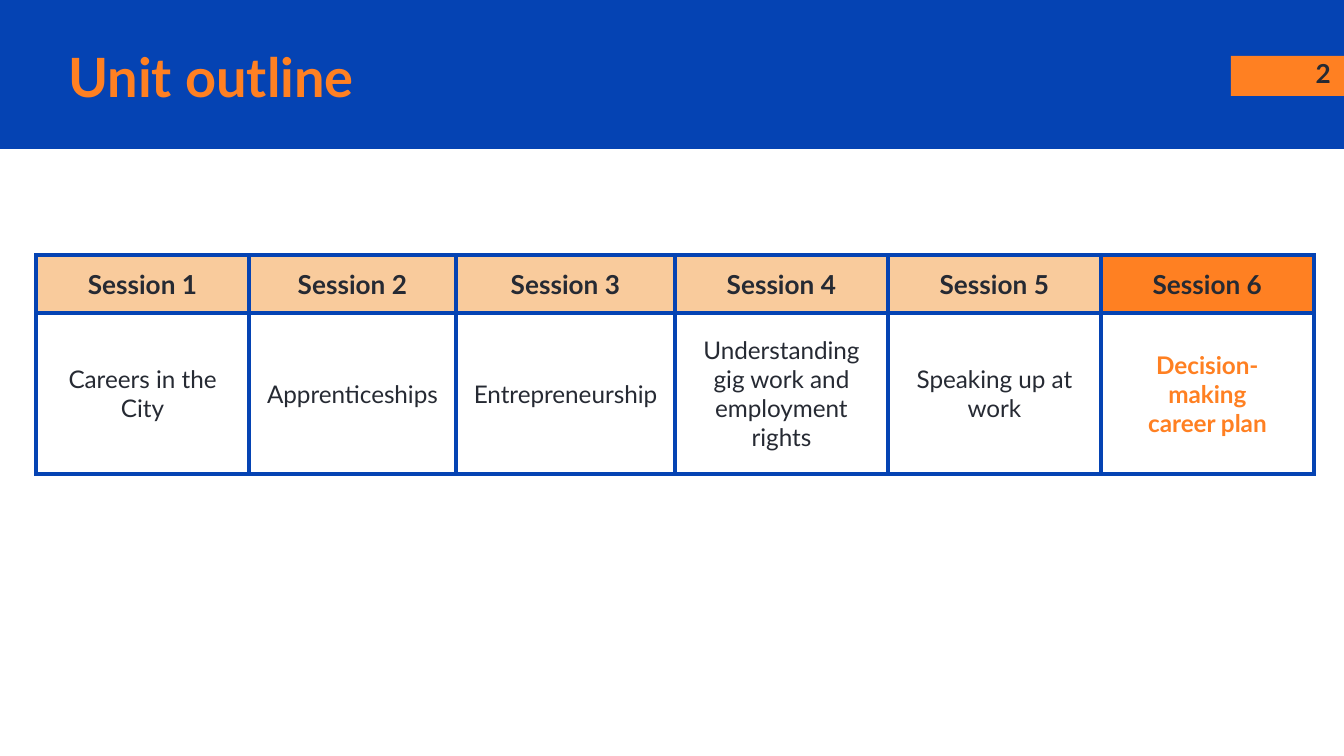
from lxml import etree
from pptx import Presentation
from pptx import util as u
from pptx.dml.color import RGBColor
from pptx.enum import shapes, text
from pptx.oxml import ns

EMU_PER_PX = 914400 / 134.4

BLUE = RGBColor(0x05, 0x43, 0xB3)
ORANGE = RGBColor(0xFF, 0x80, 0x22)
PEACH = RGBColor(0xF9, 0xCB, 0x9C)
WHITE = RGBColor(0xFF, 0xFF, 0xFF)
INK = RGBColor(0x26, 0x2A, 0x33)

SESSIONS = [
    "Careers in the City",
    "Apprenticeships",
    "Entrepreneurship",
    "Understanding gig work and employment rights",
    "Speaking up at work",
    "Decision- making\ncareer plan",
]
CURRENT_SESSION = 6
COLUMN_WIDTHS = [213, 207, 219, 213, 213, 213]
ROW_HEIGHTS = [58, 161]


def px(value):
    return u.Emu(round(value * EMU_PER_PX))


def write_text(frame, content, *, size, color=INK, bold=False, font="Lato",
               align=text.PP_ALIGN.LEFT):
    """Fill a text frame, one paragraph per line of content."""
    frame.word_wrap = True
    frame.text = content
    for paragraph in frame.paragraphs:
        paragraph.alignment = align
        for run in paragraph.runs:
            run.font.name = font
            run.font.size = u.Pt(size)
            run.font.bold = bold
            run.font.color.rgb = color


class SlideBuilder:
    inset = u.Inches(0.1)
    border_color = BLUE
    border_width = u.Pt(2.25)

    def __init__(self, slide):
        self.slide = slide

    def set_insets(self, target):
        target.margin_left = target.margin_right = self.inset
        target.margin_top = target.margin_bottom = self.inset

    def rectangle(self, left, top, width, height, color):
        shape = self.slide.shapes.add_shape(
            shapes.MSO_SHAPE.RECTANGLE, px(left), px(top), px(width), px(height))
        shape.shadow.inherit = False
        shape.fill.solid()
        shape.fill.fore_color.rgb = color
        shape.line.fill.background()
        return shape

    def title(self, content, left, top, width, height, **style):
        title = self.slide.shapes.title
        title.left, title.top = px(left), px(top)
        title.width, title.height = px(width), px(height)
        frame = title.text_frame
        self.set_insets(frame)
        frame.vertical_anchor = text.MSO_ANCHOR.MIDDLE
        frame.auto_size = text.MSO_AUTO_SIZE.NONE
        write_text(frame, content, **style)
        # Bring the title in front of the header band
        self.slide.shapes._spTree.append(title._element)

    def text_box(self, content, left, top, width, height, **style):
        box = self.slide.shapes.add_textbox(px(left), px(top), px(width), px(height))
        self.set_insets(box.text_frame)
        write_text(box.text_frame, content, **style)

    def table(self, left, top, widths, heights):
        frame = self.slide.shapes.add_table(
            len(heights), len(widths), px(left), px(top),
            px(sum(widths)), px(sum(heights)))
        table = frame.table
        table.first_row = table.horz_banding = False
        for column, width in zip(table.columns, widths):
            column.width = px(width)
        for row, height in zip(table.rows, heights):
            row.height = px(height)
        return table

    def cell(self, cell, content, fill, anchor, **style):
        self.set_insets(cell)
        cell.vertical_anchor = anchor
        write_text(cell.text_frame, content, align=text.PP_ALIGN.CENTER, **style)
        self.borders(cell)
        cell.fill.solid()
        cell.fill.fore_color.rgb = fill

    def borders(self, cell):
        properties = cell._tc.get_or_add_tcPr()
        for side in ("a:lnL", "a:lnR", "a:lnT", "a:lnB"):
            line = etree.SubElement(properties, ns.qn(side), w=str(self.border_width))
            fill = etree.SubElement(line, ns.qn("a:solidFill"))
            etree.SubElement(fill, ns.qn("a:srgbClr"), val=str(self.border_color))


def main():
    presentation = Presentation()
    presentation.slide_width, presentation.slide_height = px(1344), px(756)
    title_only = presentation.slide_layouts[5]
    builder = SlideBuilder(presentation.slides.add_slide(title_only))

    # Header band, page number and title
    builder.rectangle(0, 0, 1344, 149, BLUE)
    builder.rectangle(1231, 56, 113, 40, ORANGE)
    builder.text_box("2", 1263, 44, 81, 58, size=14, bold=True,
                     align=text.PP_ALIGN.RIGHT)
    builder.title("Unit outline", 55, 38, 1137, 75, size=29, color=ORANGE, bold=True)

    # Session table, with the current session highlighted
    table = builder.table(36, 255, COLUMN_WIDTHS, ROW_HEIGHTS)
    for index, topic in enumerate(SESSIONS):
        current = index + 1 == CURRENT_SESSION
        builder.cell(table.cell(0, index), f"Session {index + 1}",
                     ORANGE if current else PEACH, text.MSO_ANCHOR.TOP,
                     size=14, bold=True)
        builder.cell(table.cell(1, index), topic, WHITE, text.MSO_ANCHOR.MIDDLE,
                     size=13, bold=current, color=ORANGE if current else INK)

    presentation.save("out.pptx")


if __name__ == "__main__":
    main()
